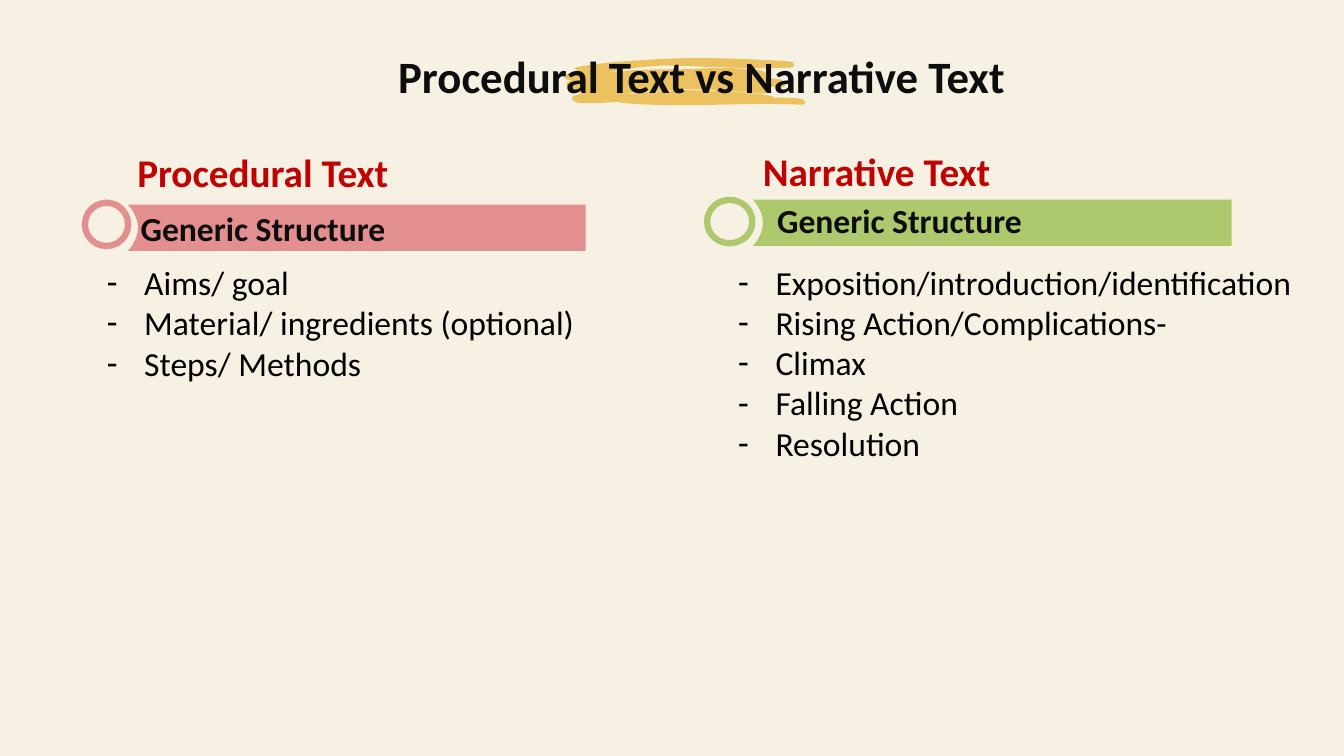
import math

from lxml import etree
from pptx import Presentation
from pptx import util as u
from pptx.dml.color import RGBColor
from pptx.enum import shapes, text
from pptx.oxml.ns import qn

CREAM = RGBColor(0xF6, 0xF0, 0xE1)
YELLOW = RGBColor(0xEC, 0xC2, 0x61)
PINK = RGBColor(0xE3, 0x8F, 0x90)
GREEN = RGBColor(0xAE, 0xC8, 0x6D)
RED = RGBColor(0xC0, 0x00, 0x00)
INK = RGBColor(0x0D, 0x0D, 0x0D)
BLACK = RGBColor(0x00, 0x00, 0x00)

UNIT = u.Cm(0.0254)
BRUSH_ANGLE = 15.6
BRUSH_CENTRE = (681, 82)

# Brush stroke: each row is two control points and an end point
BRUSH_START = (794, 98)
BRUSH = [
    (785, 97, 777, 97, 768, 97), (767, 96, 766, 95, 764, 95),
    (746, 92, 728, 91, 711, 90), (695, 90, 679, 89, 664, 90),
    (648, 91, 631, 93, 614, 94), (643, 90, 674, 88, 704, 89),
    (722, 90, 740, 91, 758, 93), (764, 93, 763, 88, 759, 86),
    (764, 86, 770, 86, 775, 87), (781, 87, 781, 81, 774, 79),
    (767, 78, 761, 77, 755, 77), (756, 77, 757, 77, 758, 77),
    (764, 77, 761, 71, 755, 70), (727, 66, 700, 68, 672, 69),
    (666, 69, 660, 69, 654, 69), (636, 69, 619, 70, 602, 72),
    (621, 68, 640, 66, 660, 65), (702, 66, 745, 69, 785, 67),
    (790, 67, 788, 61, 784, 61), (734, 58, 683, 56, 635, 60),
    (613, 61, 592, 63, 571, 67), (569, 67, 571, 70, 574, 70),
    (576, 69, 579, 69, 581, 69), (575, 70, 568, 72, 562, 74),
    (557, 75, 561, 80, 567, 80), (567, 80, 567, 80, 567, 80),
    (566, 80, 565, 81, 564, 81), (559, 83, 563, 88, 569, 88),
    (569, 88, 570, 88, 570, 88), (570, 90, 572, 92, 576, 92),
    (577, 93, 578, 93, 579, 93), (575, 93, 573, 94, 570, 95),
    (565, 96, 568, 101, 573, 102), (587, 103, 601, 102, 614, 101),
    (615, 102, 616, 102, 616, 102), (677, 108, 735, 101, 795, 104),
    (801, 105, 800, 98, 794, 98),
]

COLUMNS = [
    dict(colour=PINK, heading="Procedural Text", heading_box=(3.05, 3.61, 7.14, 1.45),
         band=(127, 203, 454), circle=(2.14, 5.11, 1.09, 1.09),
         label_box=(3.2, 5.12, 6.86, 1.27), list_box=(2.43, 6.47, 15.47, 3.33),
         items=["Aims/ goal", "Material/ ingredients (optional)", "Steps/ Methods"]),
    dict(colour=GREEN, heading="Narrative Text", heading_box=(18.75, 3.58, 6.68, 1.45),
         band=(747, 198, 475), circle=(17.82, 5.04, 1.14, 1.09),
         label_box=(19.24, 4.92, 6.86, 1.27), list_box=(18.34, 6.46, 15.52, 5.38),
         items=["Exposition/introduction/identification", "Rising Action/Complications-",
                "Climax", "Falling Action", "Resolution"]),
]


def add_outline(start, segments, colour, angle=0, centre=(0, 0)):
    """Draw a filled outline of lines (2 numbers) and cubic curves (6), turned by angle."""
    cos, sin = math.cos(math.radians(angle)), math.sin(math.radians(angle))
    cx, cy = centre
    numbers = list(start) + [v for seg in segments for v in seg]
    points = []
    for x, y in zip(numbers[::2], numbers[1::2]):
        dx, dy = x - cx, y - cy
        points.append(((cx + dx * cos + dy * sin) * UNIT, (cy - dx * sin + dy * cos) * UNIT))
    builder = s.shapes.build_freeform(*points[0])
    builder.add_line_segments(points[1:], close=True)
    sp = builder.convert_to_shape()

    lines = iter(list(sp.element.iter(qn("a:lnTo"))))
    for seg in segments:
        first = next(lines)
        if len(seg) == 6:
            curve = etree.Element(qn("a:cubicBezTo"))
            first.addprevious(curve)
            for line in (first, next(lines), next(lines)):
                curve.append(line[0])
                line.getparent().remove(line)

    sp.rotation = angle
    sp.shadow.inherit = False
    sp.fill.solid()
    sp.fill.fore_color.rgb = colour
    sp.line.fill.background()
    return sp


def write(sp, box, lines, size, colour, bold=True, bullet=None):
    sp.left, sp.top, sp.width, sp.height = [u.Cm(v) for v in box]
    tf = sp.text_frame
    tf.text = "\n".join(lines)
    frame_format = dict(word_wrap=bullet is not None, auto_size=text.MSO_AUTO_SIZE.NONE,
                        vertical_anchor=text.MSO_ANCHOR.TOP)
    for name, value in frame_format.items():
        setattr(tf, name, value)
    for p in tf.paragraphs:
        p.alignment = text.PP_ALIGN.LEFT if bullet else text.PP_ALIGN.CENTER
        p.space_before = u.Pt(0)
        if bullet:
            pPr = p._p.get_or_add_pPr()
            pPr.set("marL", str(u.Cm(0.95)))
            pPr.set("indent", str(-u.Cm(0.95)))
            etree.SubElement(pPr, qn("a:buChar")).set("char", bullet)
        for r in p.runs:
            for name, value in dict(name="Calibri", size=u.Pt(size), bold=bold).items():
                setattr(r.font, name, value)
            r.font.color.rgb = colour


prs = Presentation()
prs.slide_width, prs.slide_height = u.Cm(33.87), u.Cm(19.05)
s = prs.slides.add_slide(prs.slide_layouts[4])

title = s.shapes.title
write(title, (9.28, 1.09, 16.81, 1.63), ["Procedural Text vs Narrative Text"], 32, INK)

paper = s.shapes.add_shape(shapes.MSO_SHAPE.RECTANGLE, 0, 0, prs.slide_width, prs.slide_height)
paper.shadow.inherit = False
paper.fill.solid()
paper.fill.fore_color.rgb = CREAM
paper_colour = paper.element.spPr.find(qn("a:solidFill"))[0]
etree.SubElement(paper_colour, qn("a:alpha")).set("val", "90000")
paper.line.fill.background()

brush = add_outline(BRUSH_START, BRUSH, YELLOW, BRUSH_ANGLE, BRUSH_CENTRE)
for backdrop in (paper, brush):
    title.element.addprevious(backdrop.element)

for n, col in enumerate(COLUMNS):
    heading, body = s.placeholders[2 * n + 1], s.placeholders[2 * n + 2]
    write(heading, col["heading_box"], [col["heading"]], 28, RED)
    write(body, col["list_box"], col["items"], 24, BLACK, bold=False, bullet="-")

    left, top, width = col["band"]
    right, bottom = left + width, top + 46
    add_outline((left, top),
                [(right, top), (right, bottom), (left, bottom), (left + 4, top + 41),
                 (left + 7, top + 36, left + 10, top + 30, left + 10, top + 23),
                 (left + 10, top + 16, left + 7, top + 10, left + 4, top + 5)],
                col["colour"])

    circle = s.shapes.add_shape(shapes.MSO_SHAPE.OVAL, *[u.Cm(v) for v in col["circle"]])
    circle.shadow.inherit = False
    circle.fill.background()
    circle.line.color.rgb = col["colour"]
    circle.line.width = u.Pt(4.5)

    label = s.shapes.add_textbox(0, 0, 0, 0)
    write(label, col["label_box"], ["Generic Structure"], 24, INK)

prs.save("out.pptx")
